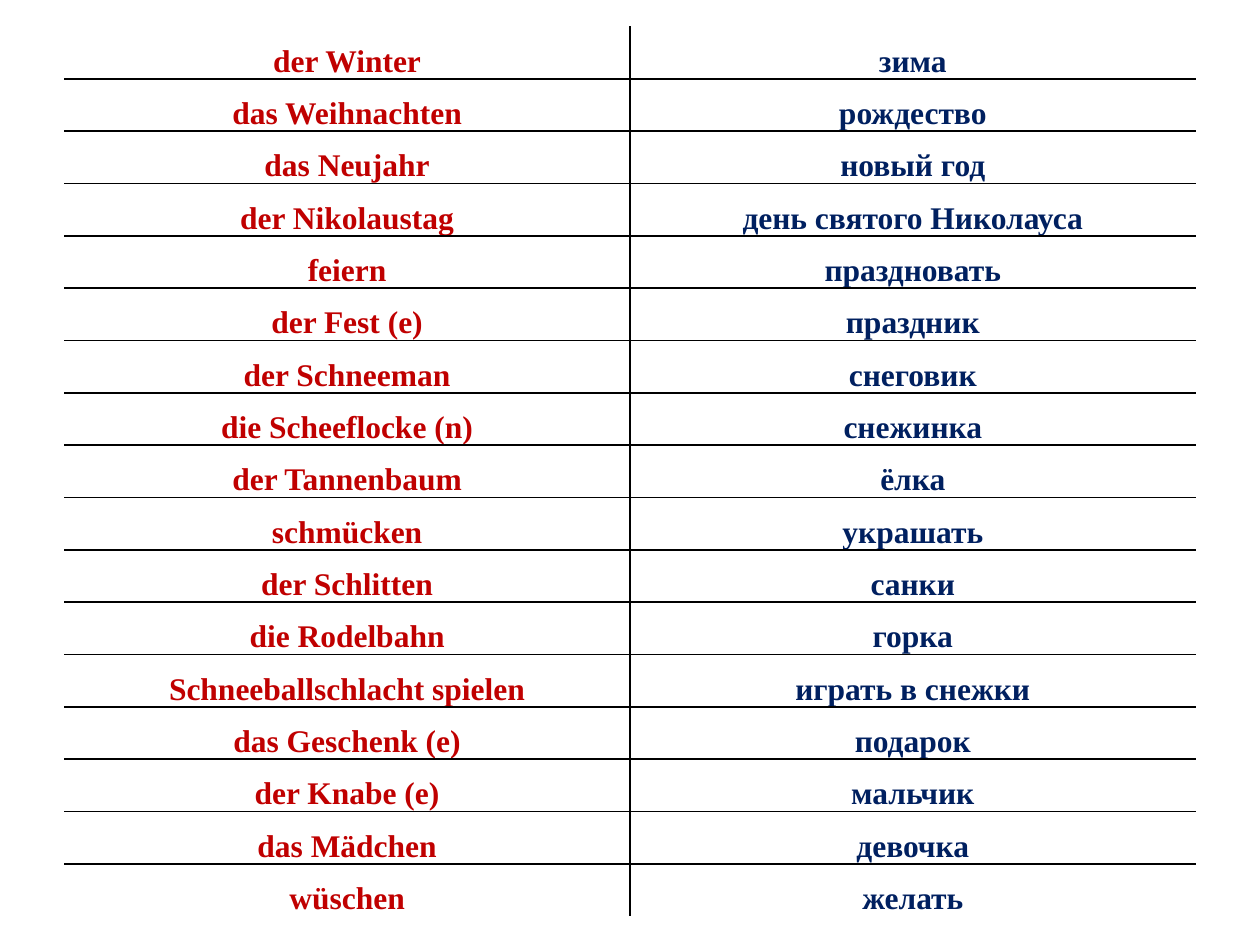
from lxml.etree import SubElement as Sub
from pptx import Presentation
from pptx.dml.color import RGBColor as Rgb
from pptx.enum.text import MSO_ANCHOR as Anchor, PP_ALIGN as Align
from pptx.oxml.ns import qn
from pptx.util import Inches, Pt

HUES = {"german": "C00000", "russian": "002060", "rule": "000000"}
WORDS = [
    ("der Winter", "зима"),
    ("das Weihnachten", "рождество"),
    ("das Neujahr", "новый год"),
    ("der Nikolaustag", "день святого Николауса"),
    ("feiern", "праздновать"),
    ("der Fest (e)", "праздник"),
    ("der Schneeman", "снеговик"),
    ("die Scheeflocke (n)", "снежинка"),
    ("der Tannenbaum", "ёлка"),
    ("schmücken", "украшать"),
    ("der Schlitten", "санки"),
    ("die Rodelbahn", "горка"),
    ("Schneeballschlacht spielen", "играть в снежки"),
    ("das Geschenk (e)", "подарок"),
    ("der Knabe (e)", "мальчик"),
    ("das Mädchen", "девочка"),
    ("wüschen", "желать"),
]


def write(cell, text, hue, size=18, font="Times New Roman", bold=True):
    cell.vertical_anchor = Anchor.MIDDLE
    cell.margin_left = cell.margin_right = Inches(0.07)
    cell.margin_top = cell.margin_bottom = 0
    par = cell.text_frame.paragraphs[0]
    par.alignment, par.line_spacing = Align.CENTER, 1.5
    run = par.add_run()
    run.text = text
    run.font.size, run.font.name, run.font.bold = Pt(size), font, bold
    run.font.color.rgb = Rgb.from_string(hue)


def rule(cell, sides):
    """Draw the sides named in a string of L, R, T, B and clear the others."""
    props = cell._tc.get_or_add_tcPr()
    for side in "LRTB":
        line = Sub(props, qn(f"a:ln{side}"), w=str(Pt(1)))
        if side in sides:
            fill = Sub(line, qn("a:solidFill"))
            Sub(fill, qn("a:srgbClr"), val=HUES["rule"])
        else:
            Sub(line, qn("a:noFill"))


deck = Presentation()
deck.slide_width, deck.slide_height = Inches(10), Inches(7.5)
slide = deck.slides.add_slide(deck.slide_layouts[6])

# Two equal columns, centred on the slide
left, top = Inches(0.51), Inches(0.21)
wide = deck.slide_width - 2 * left
high = Inches(6.73)
grid = slide.shapes.add_table(len(WORDS), 2, left, top, wide, high).table
grid.first_row = grid.horz_banding = False

last = len(WORDS) - 1
for row, pair in enumerate(WORDS):
    for col, (text, lang) in enumerate(zip(pair, ("german", "russian"))):
        cell = grid.cell(row, col)
        write(cell, text, HUES[lang])
        # Only inner edges are ruled
        rule(cell, "RL"[col] + "T" * (row > 0) + "B" * (row < last))
        cell.fill.background()

deck.save("out.pptx")
